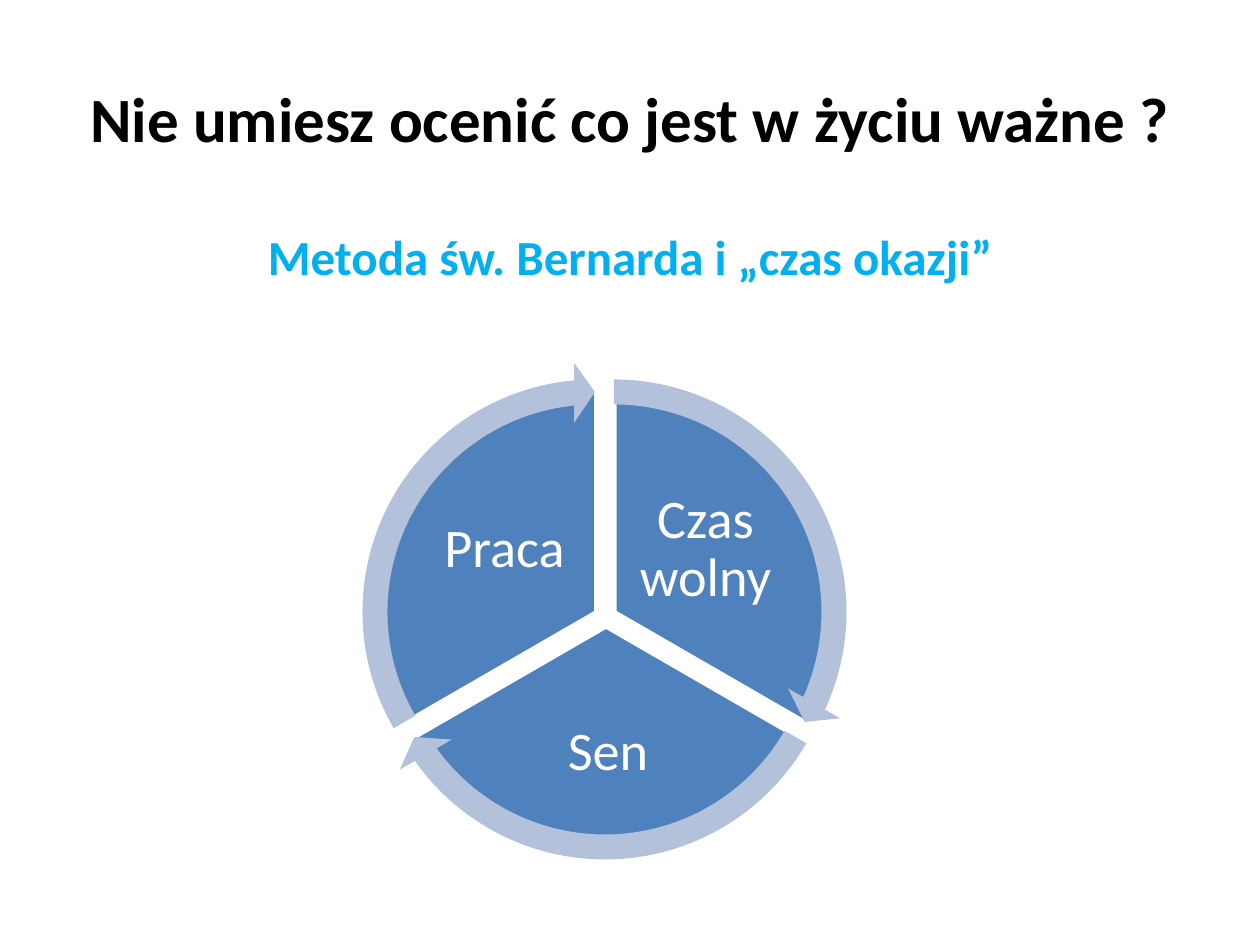
from pptx import Presentation
from pptx.dml.color import RGBColor
from pptx.enum.shapes import MSO_SHAPE as Shape
from pptx.enum.text import MSO_ANCHOR as Anchor, PP_ALIGN as Align
from pptx.util import Emu, Pt

BLACK = RGBColor(0x00, 0x00, 0x00)
WHITE = RGBColor(0xFF, 0xFF, 0xFF)
SKY = RGBColor(0x00, 0xB0, 0xF0)
BLUE = RGBColor(0x4F, 0x81, 0xBD)
PALE_BLUE = RGBColor(0xB3, 0xC1, 0xDB)

PX = 914400 / 126  # EMU per px
ANGLE = 0.6        # adjustment units per degree


def box(*lengths):
    return [Emu(round(length * PX)) for length in lengths]


def add_text(shapes, text, frame, *, size, color, bold=False,
             anchor=Anchor.MIDDLE, inset=(13, 6), spacing=1.0):
    text_frame = shapes.add_textbox(*box(*frame)).text_frame
    text_frame.word_wrap = True
    text_frame.vertical_anchor = anchor
    side, edge = box(*inset)
    text_frame.margin_left = text_frame.margin_right = side
    text_frame.margin_top = text_frame.margin_bottom = edge
    paragraph = text_frame.paragraphs[0]
    paragraph.alignment = Align.CENTER
    paragraph.line_spacing = spacing
    run = paragraph.add_run()
    run.text = text
    run.font.name = "Calibri"
    run.font.size = Pt(size)
    run.font.bold = bold
    run.font.color.rgb = color


prs = Presentation()
prs.slide_width, prs.slide_height = box(1260, 945)
slide = prs.slides.add_slide(prs.slide_layouts[6])

# Subtitle and title
add_text(slide.shapes, "Metoda św. Bernarda i „czas okazji”", (63, 220, 1134, 624),
         size=28, color=SKY, bold=True, anchor=Anchor.TOP)
add_text(slide.shapes, "Nie umiesz ocenić co jest w życiu ważne ?", (63, 38, 1134, 158),
         size=36, color=BLACK, bold=True)

# Cycle: label, label frame, left and top of the sector, clockwise from the top
SECTORS = [
    ("Czas wolny", (626, 484, 159, 132), 392, 389),
    ("Sen", (489, 694, 238, 117), 383, 404),
    ("Praca", (425, 484, 159, 132), 373, 389),
]
SECTOR_SIZE, ARROW_SIZE = 446, 500
SWEEP = 360 // len(SECTORS)
starts = [(270 + SWEEP * i) % 360 for i in range(len(SECTORS))]
cycle = slide.shapes.add_group_shape().shapes

# Sectors with their labels
for (label, label_frame, left, top), start in zip(SECTORS, starts):
    sector = cycle.add_shape(Shape.PIE, *box(left, top, SECTOR_SIZE, SECTOR_SIZE))
    sector.shadow.inherit = False
    sector.adjustments[0] = start * ANGLE
    sector.adjustments[1] = (start + SWEEP) % 360 * ANGLE
    sector.fill.solid()
    sector.fill.fore_color.rgb = BLUE
    sector.line.color.rgb = WHITE
    sector.line.width = Pt(2)
    add_text(cycle, label, label_frame, size=31, color=WHITE, inset=(5, 5), spacing=0.9)

# Arrows around the sectors
for (_, _, left, top), start in zip(SECTORS, starts):
    arrow = cycle.add_shape(Shape.CIRCULAR_ARROW,
                            *box(left - 28, top - 27, ARROW_SIZE, ARROW_SIZE))
    arrow.shadow.inherit = False
    head_sweep = 5.46
    head_start = (start + SWEEP - head_sweep) % 360
    shaping = (0.05, head_sweep * ANGLE, head_start * ANGLE, start * ANGLE, 0.06)
    for i, value in enumerate(shaping):
        arrow.adjustments[i] = value
    arrow.fill.solid()
    arrow.fill.fore_color.rgb = PALE_BLUE
    arrow.line.fill.background()

prs.save("out.pptx")
